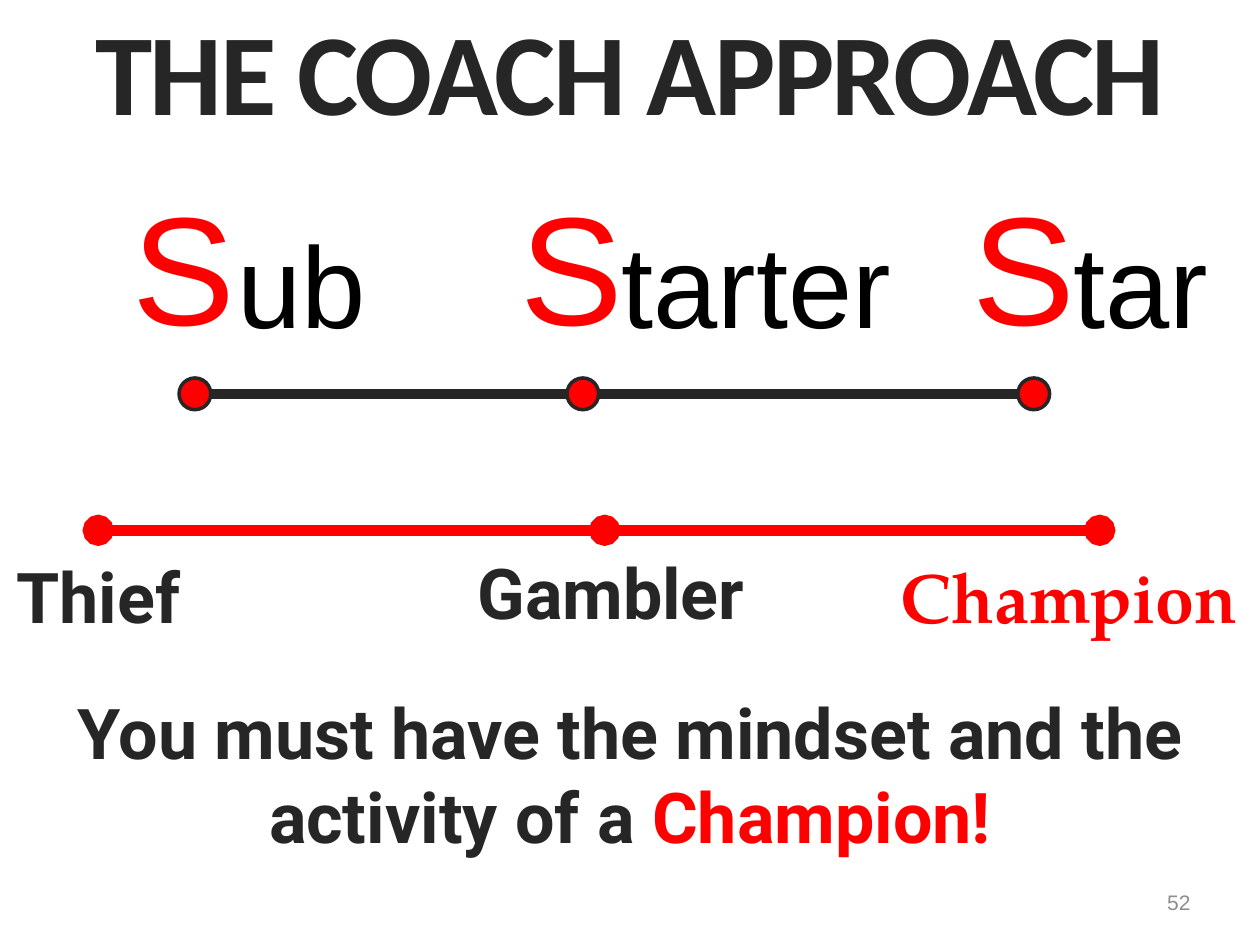
from lxml.etree import SubElement as Sub
from pptx import Presentation
from pptx.dml.color import RGBColor as Rgb
from pptx.enum.shapes import MSO_CONNECTOR as Conn, MSO_SHAPE as Kind
from pptx.enum.text import MSO_ANCHOR as Anchor, MSO_AUTO_SIZE as Fit, PP_ALIGN as Align
from pptx.oxml import parse_xml
from pptx.oxml.ns import nsdecls, qn
from pptx.util import Cm, Pt

DARK, RED, BLACK, GREY = "262626", "FF0000", "000000", "8D8D8D"

# Font formats
HEAD = dict(name="Calibri", size=Pt(66), bold=True)
BOLD = dict(name="Roboto", size=Pt(40), bold=True)
SERIF = dict(name="TeX Gyre Pagella", size=Pt(40), bold=True)
BIG = dict(name="Arial", size=Pt(88))
REST = dict(name="Arial", size=Pt(66))
SMALL = dict(name="Arial", size=Pt(12))


def paint(part, tone):
    """Give a fill, line fill or font a plain colour."""
    if hasattr(part, "solid"):
        part.solid()
        part = part.fore_color
    else:
        part = part.color
    part.rgb = Rgb.from_string(tone)


def write(shape, runs, font, align=Align.LEFT, wrap=True, inset=0.13,
          anchor=Anchor.TOP):
    """Fill a shape with (text, colour) runs in one paragraph."""
    frame, gap = shape.text_frame, Cm(inset)
    look = dict(word_wrap=wrap, auto_size=Fit.SHAPE_TO_FIT_TEXT,
                vertical_anchor=anchor, margin_left=gap, margin_right=gap,
                margin_top=gap, margin_bottom=gap)
    for key, val in look.items():
        setattr(frame, key, val)
    para = frame.paragraphs[0]
    para.alignment = align
    for text, tone in runs:
        run = para.add_run()
        run.text = text
        for key, val in font.items():
            setattr(run.font, key, val)
        paint(run.font, tone)
    return para


def add_text(slide, box, runs, font, **look):
    shape = slide.shapes.add_textbox(*map(Cm, box))
    write(shape, runs, font, **look)


def add_title(slide, text):
    title = slide.shapes.title
    box = dict(left=Cm(0), top=Cm(0), width=Cm(25.4), height=Cm(2.72))
    for key, val in box.items():
        setattr(title, key, val)
    para = write(title, [(text, DARK)], HEAD, align=Align.CENTER, inset=0)
    para.line_spacing = 1.0
    # Tight letters with a thin pale outline
    props = para.runs[0].font._element
    props.set("spc", "-150")
    props.insert(0, parse_xml(
        f'<a:ln {nsdecls("a")} w="9525"><a:solidFill>'
        '<a:srgbClr val="DFDFDF"/></a:solidFill></a:ln>'))


def add_line(slide, start, end, y, tone, *ends):
    """Draw a level line; ends name the sides that get an oval."""
    line = slide.shapes.add_connector(
        Conn.STRAIGHT, Cm(start), Cm(y), Cm(end), Cm(y))
    line.line.width = Pt(6)
    paint(line.line.fill, tone)
    for side in ends:
        Sub(line.line._get_or_add_ln(), qn(f"a:{side}"), type="oval")
    Sub(line._element.spPr, qn("a:effectLst"))


def add_dot(slide, x, y, size=0.64):
    dot = slide.shapes.add_shape(
        Kind.OVAL, Cm(x - size / 2), Cm(y - size / 2), Cm(size), Cm(size))
    dot.shadow.inherit = False
    paint(dot.fill, RED)
    paint(dot.line.fill, DARK)
    dot.line.width = Pt(2)


def main():
    deck = Presentation()
    deck.slide_width, deck.slide_height = Cm(25.4), Cm(19.05)
    slide = deck.slides.add_slide(deck.slide_layouts[5])
    add_title(slide, "THE COACH APPROACH")

    # Closing message
    add_text(slide, (0, 13.77, 25.4, 3.63),
             [("You must have the mindset and the activity of a ", DARK),
              ("Champion!", RED)], BOLD, align=Align.CENTER)

    # Red scale with its labels
    add_line(slide, 1.98, 22.17, 10.69, RED, "headEnd", "tailEnd")
    add_line(slide, 4.17, 12.19, 10.69, RED, "tailEnd")
    for text, box, tone, font, align in (
            ("Thief", (0.2, 11.02, 5.61, 1.96), DARK, BOLD, Align.LEFT),
            ("Gambler", (9.19, 10.95, 6.25, 1.96), DARK, BOLD, Align.CENTER),
            ("Champion", (17.7, 11.02, 7.7, 2.13), RED, SERIF, Align.CENTER)):
        add_text(slide, box, [(text, tone)], font, align=align)

    # Dark scale: a dot, a large S and the rest of each word
    level, dots = 7.94, (3.93, 11.75, 20.84)
    add_line(slide, dots[0], dots[-1], level, DARK)
    words = (("ub", 2.54, 1.91, 4.65, 2.87),
             ("tarter", 10.36, 2.34, 12.4, 5.72),
             ("tar", 19.48, 2.74, 21.51, 3))
    for dot, (rest, left, wide, next_x, span) in zip(dots, words):
        add_text(slide, (left, 3.33, wide, 3.76), [("S", RED)], BIG)
        add_dot(slide, dot, level)
        add_text(slide, (next_x, 4.17, span, 2.87), [(rest, BLACK)], REST,
                 wrap=False)

    # Page number
    add_text(slide, (23.37, 17.81, 0.76, 0.74), [("52", GREY)], SMALL,
             align=Align.RIGHT, wrap=False, anchor=Anchor.MIDDLE)
    deck.save("out.pptx")


if __name__ == "__main__":
    main()
